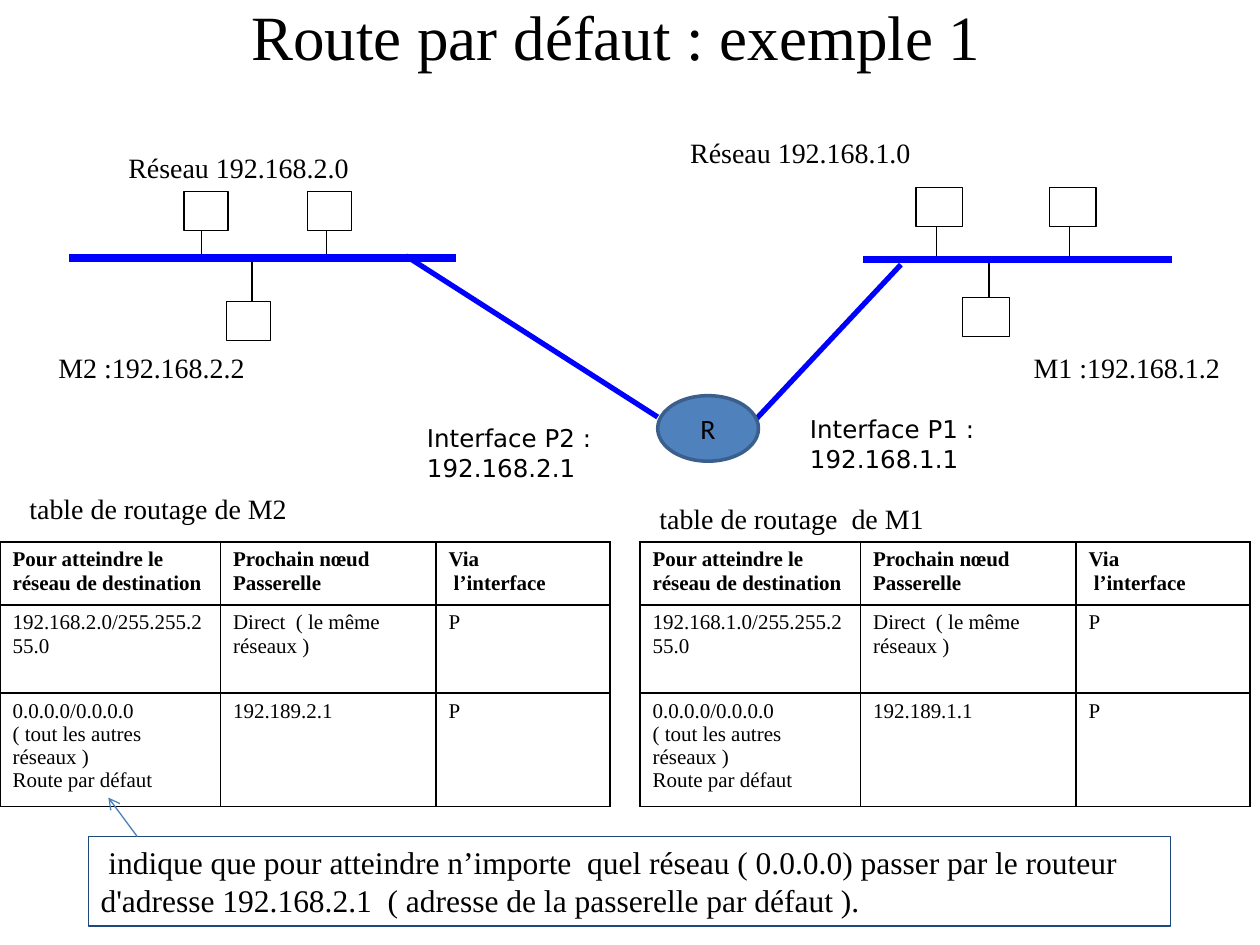
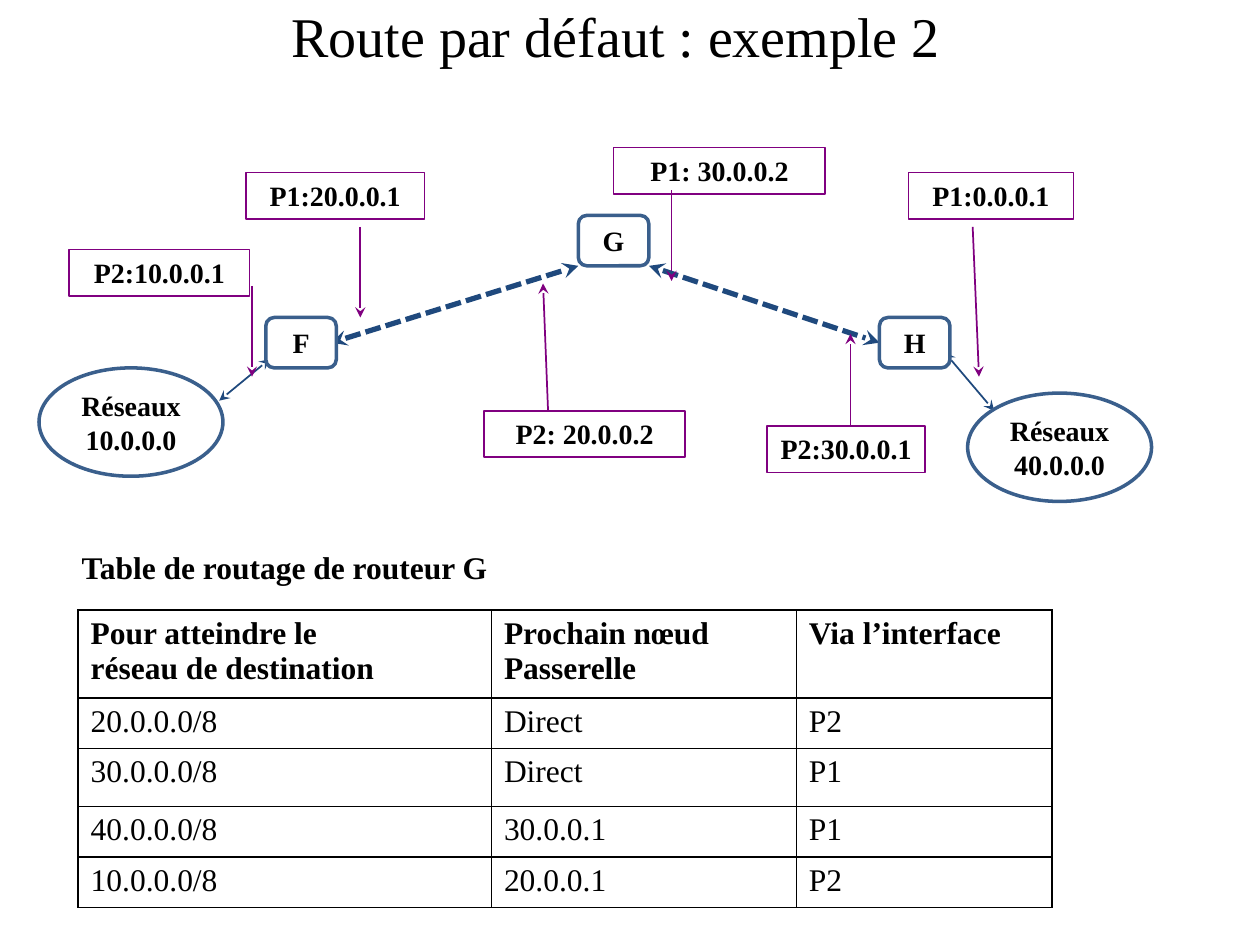
from lxml import etree
from pptx import Presentation
from pptx.dml.color import RGBColor
from pptx.enum import dml, shapes, text
from pptx.oxml import ns
from pptx.util import Inches, Pt

HUE = {
    "ink": "000000",
    "paper": "FFFFFF",
    "link": "0000FF",
    "disc": "4F81BD",
    "edge": "3A5F8C",
    "navy": "1F497D",
    "sky": "4B7EBC",
    "plum": "800080",
}
SERIF = "Times New Roman"
FORM = shapes.MSO_SHAPE
LEFT, MID = text.PP_ALIGN.LEFT, text.PP_ALIGN.CENTER


def rgb(name):
    return RGBColor.from_string(HUE[name])


class Deck:
    def __init__(self):
        self.show = Presentation()
        self.show.slide_width = Inches(10)
        self.show.slide_height = Inches(7.5)
        self.slide = None

    def page(self, title, size):
        self.slide = self.show.slides.add_slide(self.show.slide_layouts[6])
        self.label(title, (0.39, 0, 9, 0.56), size, align=MID, mid=True)

    def fill_text(self, frame, words, size, bold=False, align=LEFT, font=SERIF):
        frame.text = words
        for par in frame.paragraphs:
            par.alignment = align
            for run in par.runs:
                run.font.name = font
                run.font.size = Pt(size)
                run.font.bold = bold
                run.font.color.rgb = rgb("ink")

    def label(self, words, at, size, mid=False, wrap=True, **look):
        box = self.slide.shapes.add_textbox(*map(Inches, at))
        frame = box.text_frame
        frame.word_wrap = wrap
        frame.vertical_anchor = text.MSO_ANCHOR.MIDDLE if mid else text.MSO_ANCHOR.TOP
        self.fill_text(frame, words, size, **look)

    def shape(self, form, at, line, width, fill=None, words="", size=16, top=False, **look):
        item = self.slide.shapes.add_shape(form, *map(Inches, at))
        item.shadow.inherit = False
        if fill:
            item.fill.solid()
            item.fill.fore_color.rgb = rgb(fill)
        else:
            item.fill.background()
        item.line.color.rgb = rgb(line)
        item.line.width = Pt(width)
        if words:
            frame = item.text_frame
            frame.word_wrap = True
            frame.vertical_anchor = text.MSO_ANCHOR.TOP if top else text.MSO_ANCHOR.MIDDLE
            self.fill_text(frame, words, size, **look)

    def line(self, start, end, hue, width, head=None, tail=None, dash=False):
        item = self.slide.shapes.add_connector(
            shapes.MSO_CONNECTOR.STRAIGHT, *map(Inches, start + end))
        item.line.color.rgb = rgb(hue)
        item.line.width = Pt(width)
        if dash:
            item.line.dash_style = dml.MSO_LINE.SQUARE_DOT
        props = item._element.spPr
        for tag, kind in (("a:headEnd", head), ("a:tailEnd", tail)):
            if kind:
                etree.SubElement(props.find(ns.qn("a:ln")), ns.qn(tag), type=kind)
        etree.SubElement(props, ns.qn("a:effectLst"))

    def border(self, cell):
        props = cell._tc.get_or_add_tcPr()
        for spot, side in enumerate("LRTB"):
            edge = etree.Element(ns.qn(f"a:ln{side}"), w=str(Pt(1)))
            fill = etree.SubElement(edge, ns.qn("a:solidFill"))
            etree.SubElement(fill, ns.qn("a:srgbClr"), val=HUE["ink"])
            props.insert(spot, edge)

    def table(self, left, top, cols, rows, data, size):
        grid = self.slide.shapes.add_table(
            len(rows), len(cols), Inches(left), Inches(top),
            Inches(sum(cols)), Inches(sum(rows))).table
        grid.first_row = grid.horz_banding = False
        for col, width in zip(grid.columns, cols):
            col.width = Inches(width)
        for row, high in zip(grid.rows, rows):
            row.height = Inches(high)
        for r, line in enumerate(data):
            for c, words in enumerate(line):
                cell = grid.cell(r, c)
                cell.fill.solid()
                cell.fill.fore_color.rgb = rgb("paper")
                self.fill_text(cell.text_frame, words, size, bold=r == 0)
                self.border(cell)


def network(deck, bus, hosts, stems, size, top):
    wide, high = size
    low = top + 0.87
    for left, y in zip(hosts, (top, top, low)):
        deck.shape(FORM.RECTANGLE, (left, y, wide, high), "ink", 0.75, "paper")
    start, end, y = bus
    for x, edge in zip(stems, (top + high, top + high, low)):
        deck.line((x, edge), (x, y + 0.02), "ink", 0.75)
    deck.line((start, y), (end, y), "link", 4.5)


def routes(deck, left, net):
    data = [
        ("Pour atteindre le\nréseau de destination", "Prochain nœud\nPasserelle", "Via\n l’interface"),
        (f"192.168.{net}.0/255.255.255.0", "Direct  ( le même réseaux )", "P"),
        ("0.0.0.0/0.0.0.0\n( tout les autres réseaux )\nRoute par défaut", f"192.189.{net}.1", "P"),
    ]
    deck.table(left, 4.3, (1.75, 1.71, 1.38), (0.5, 0.7, 0.9), data, 12)


def first(deck):
    deck.page("Route par défaut : exemple 1", 36)
    deck.line((3.22, 2.03), (5.22, 3.31), "link", 3)
    network(deck, (0.55, 3.62, 2.05), (1.46, 2.44, 1.8), (1.6, 2.59, 2), (0.35, 0.31), 1.52)
    network(deck, (6.85, 9.3, 2.06), (7.27, 8.33, 7.64), (7.43, 8.49, 7.85), (0.37, 0.31), 1.49)
    deck.line((5.96, 3.37), (7.15, 2.1), "link", 3)
    deck.shape(FORM.OVAL, (5.22, 3.14, 0.8, 0.52), "edge", 2, "disc", "R", align=MID, font="Calibri")
    for words, left, top, wide in (
        ("Réseau 192.168.2.0", 0.92, 1.14, 2.99),
        ("Réseau 192.168.1.0", 5.38, 1.02, 3.34),
        (" M1 :192.168.1.2", 8.05, 2.73, 1.78),
        (" M2 :192.168.2.2", 0.31, 2.73, 1.78),
        (" table de routage de M2", 0.08, 3.85, 3.44),
        (" table de routage  de M1", 5.08, 3.93, 3.36),
    ):
        deck.label(words, (left, top, wide, 0.37), 16, mid=True)
    for net, left, top in ((2, 3.29, 3.31), (1, 6.33, 3.24)):
        deck.label(f"Interface P{net} :\n192.168.{net}.1", (left, top, 1.92, 0.57), 14,
                   wrap=False, font="DejaVu Sans")
    routes(deck, 0, 2)
    routes(deck, 5.08, 1)
    deck.shape(FORM.RECTANGLE, (0.7, 6.64, 8.59, 0.71), "navy", 0.75, size=18, top=True,
               words=" indique que pour atteindre n’importe  quel réseau ( 0.0.0.0) passer par le "
                     "routeur d'adresse 192.168.2.1  ( adresse de la passerelle par défaut ).")
    deck.line((1.09, 6.64), (0.86, 6.33), "sky", 0.75, tail="arrow")


def second(deck):
    deck.page("Route par défaut : exemple 2", 32)
    data = [
        ("Pour atteindre le\nréseau de destination", "Prochain nœud Passerelle", "Via l’interface"),
        ("20.0.0.0/8", "Direct", "P2"),
        ("30.0.0.0/8", "Direct", "P1"),
        ("40.0.0.0/8", "30.0.0.1", "P1"),
        ("10.0.0.0/8", "20.0.0.1", "P2"),
    ]
    deck.table(0.62, 4.84, (3.28, 2.42, 2.03), (0.65, 0.4, 0.46, 0.38, 0.38), data, 18)
    deck.label("Table de routage de routeur G", (0.55, 4.3, 3.45, 0.4), 18, wrap=False, bold=True)
    for start, end, thick in (
        ((1.74, 3.18), (2.14, 2.85), False),
        ((2.63, 2.72), (4.59, 2.11), True),
        ((5.15, 2.11), (6.98, 2.72), True),
        ((7.5, 2.8), (7.89, 3.26), False),
    ):
        deck.line(start, end, "navy", 3 if thick else 1, "stealth", "stealth", thick)
    for start, end in (
        ((4.35, 3.26), (4.31, 2.25)),
        ((6.75, 3.37), (6.75, 2.65)),
        ((2.86, 1.8), (2.86, 2.52)),
        ((5.33, 1.51), (5.33, 2.23)),
        ((7.72, 1.8), (7.77, 2.99)),
        ((2, 2.27), (2, 2.99)),
    ):
        deck.line(start, end, "plum", 1, tail="stealth")
    for words, left, top, wide in (
        ("P2:10.0.0.1", 0.55, 1.98, 1.43),
        ("P2: 20.0.0.2", 3.84, 3.26, 1.6),
        ("P2:30.0.0.1", 6.09, 3.38, 1.25),
        ("P1:20.0.0.1", 1.95, 1.37, 1.42),
        ("P1:0.0.0.1", 7.21, 1.37, 1.31),
        ("P1: 30.0.0.2", 4.87, 1.17, 1.68),
    ):
        deck.shape(FORM.RECTANGLE, (left, top, wide, 0.37), "plum", 1, words=words,
                   top=True, bold=True, align=MID)
    for words, left, top in (("F", 2.11, 2.52), ("G", 4.59, 1.71), ("H", 6.98, 2.52)):
        deck.shape(FORM.ROUNDED_RECTANGLE, (left, top, 0.56, 0.4), "edge", 2, "paper", words,
                   bold=True, align=MID)
    for net, left, top in ((10, 0.31, 2.92), (40, 7.68, 3.12)):
        deck.shape(FORM.OVAL, (left, top, 1.46, 0.86), "edge", 2, "paper",
                   f"Réseaux {net}.0.0.0", bold=True, align=MID)


def main():
    deck = Deck()
    first(deck)
    second(deck)
    deck.show.save("out.pptx")


if __name__ == "__main__":
    main()
